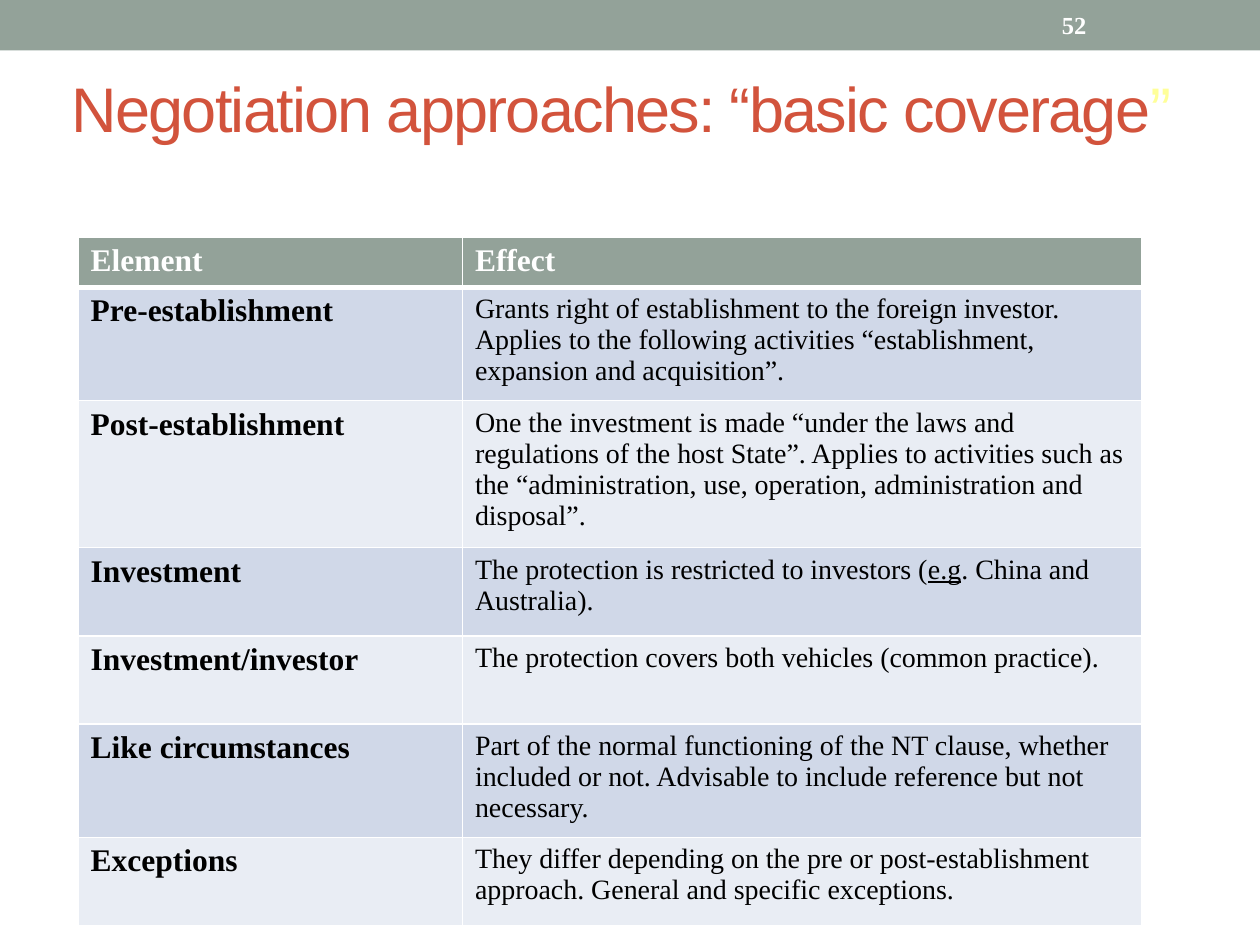
import pptx
import pptx.util
import pptx.dml.color
import pptx.enum.shapes
import pptx.enum.text
import pptx.oxml.ns
from lxml import etree

Inches, Pt = pptx.util.Inches, pptx.util.Pt
SERIF, SANS = "Times New Roman", "Arial"
GREEN, RED, YELLOW = "93A299", "D2533C", "FFFF99"
WHITE, BLACK = "FFFFFF", "000000"
BANDS = ("D0D8E8", "E9EDF4")

PAGE = "52"
TITLE = (("Negotiation approaches: “basic coverage", RED), ("”", YELLOW))
HEAD = ("Element", ["Effect"])
# Each effect is a list of parts; every second part is underlined.
ROWS = [
    ("Pre-establishment", ["Grants right of establishment to the foreign investor. "
     "Applies to the following activities “establishment, expansion and acquisition”."]),
    ("Post-establishment", ["One the investment is made “under the laws and regulations "
     "of the host State”. Applies to activities such as the “administration, use, "
     "operation, administration and disposal”."]),
    ("Investment", ["The protection is restricted to investors (", "e.g",
     ". China and Australia)."]),
    ("Investment/investor", ["The protection covers both vehicles (common practice)."]),
    ("Like circumstances", ["Part of the normal functioning of the NT clause, whether "
     "included or not. Advisable to include reference but not necessary."]),
    ("Exceptions", ["They differ depending on the pre or post-establishment approach. "
     "General and specific exceptions."]),
]
COLS = (3.05, 5.39)
HEIGHTS = (0.4, 0.63, 0.9) + (0.7,) * 4


def rgb(code):
    return pptx.dml.color.RGBColor.from_string(code)


def paint(shape, code):
    shape.fill.solid()
    shape.fill.fore_color.rgb = rgb(code)


def write(para, text, size, code, face=SERIF, bold=False):
    run = para.add_run()
    run.text = text
    font = run.font
    font.size, font.name, font.bold = Pt(size), face, bold
    font.color.rgb = rgb(code)
    return run


def add_box(slide, *place):
    """Add a wrapping, vertically centred text box; return its paragraph."""
    frame = slide.shapes.add_textbox(*map(Inches, place)).text_frame
    frame.word_wrap = True
    frame.vertical_anchor = pptx.enum.text.MSO_ANCHOR.MIDDLE
    return frame.paragraphs[0]


def edge(cell, side, width):
    """Draw a white border on one side (L, R, T or B) of a cell."""
    qn = pptx.oxml.ns.qn
    line = etree.SubElement(cell._tc.get_or_add_tcPr(), qn("a:ln" + side), w=str(Pt(width)))
    fill = etree.SubElement(line, qn("a:solidFill"))
    etree.SubElement(fill, qn("a:srgbClr"), val=WHITE)


def add_grid(slide):
    rows = [HEAD] + ROWS
    table = slide.shapes.add_table(len(rows), len(COLS), Inches(0.62), Inches(1.88),
                                   Inches(sum(COLS)), Inches(sum(HEIGHTS))).table
    for col, width in zip(table.columns, COLS):
        col.width = Inches(width)
    for i, (name, parts) in enumerate(rows):
        table.rows[i].height = Inches(HEIGHTS[i])
        top = i == 0
        ink = WHITE if top else BLACK
        for j in range(len(COLS)):
            cell = table.cell(i, j)
            for side in "LRTB":
                thick = (i, side) in ((0, "B"), (1, "T"))
                edge(cell, side, 3 if thick else 1)
            paint(cell, GREEN if top else BANDS[(i - 1) % 2])
            para = cell.text_frame.paragraphs[0]
            strong = top or j == 0
            for k, part in enumerate(parts if j else [name]):
                run = write(para, part, 18 if strong else 16, ink, bold=strong)
                run.font.underline = k % 2 == 1


def main():
    deck = pptx.Presentation()
    deck.slide_width, deck.slide_height = Inches(10), Inches(7.5)
    slide = deck.slides.add_slide(deck.slide_layouts[6])

    band = slide.shapes.add_shape(pptx.enum.shapes.MSO_SHAPE.RECTANGLE,
                                  0, 0, deck.slide_width, Inches(0.4))
    band.shadow.inherit = False
    paint(band, GREEN)
    band.line.fill.background()

    write(add_box(slide, 8.33, 0.02, 1.17, 0.36), PAGE, 14, WHITE, bold=True)
    title = add_box(slide, 0.47, 0.23, 9, 1.25)
    for text, code in TITLE:
        run = write(title, text, 36, code, SANS)
        run.font._element.set("spc", "-100")
    add_grid(slide)
    deck.save("out.pptx")


if __name__ == "__main__":
    main()
